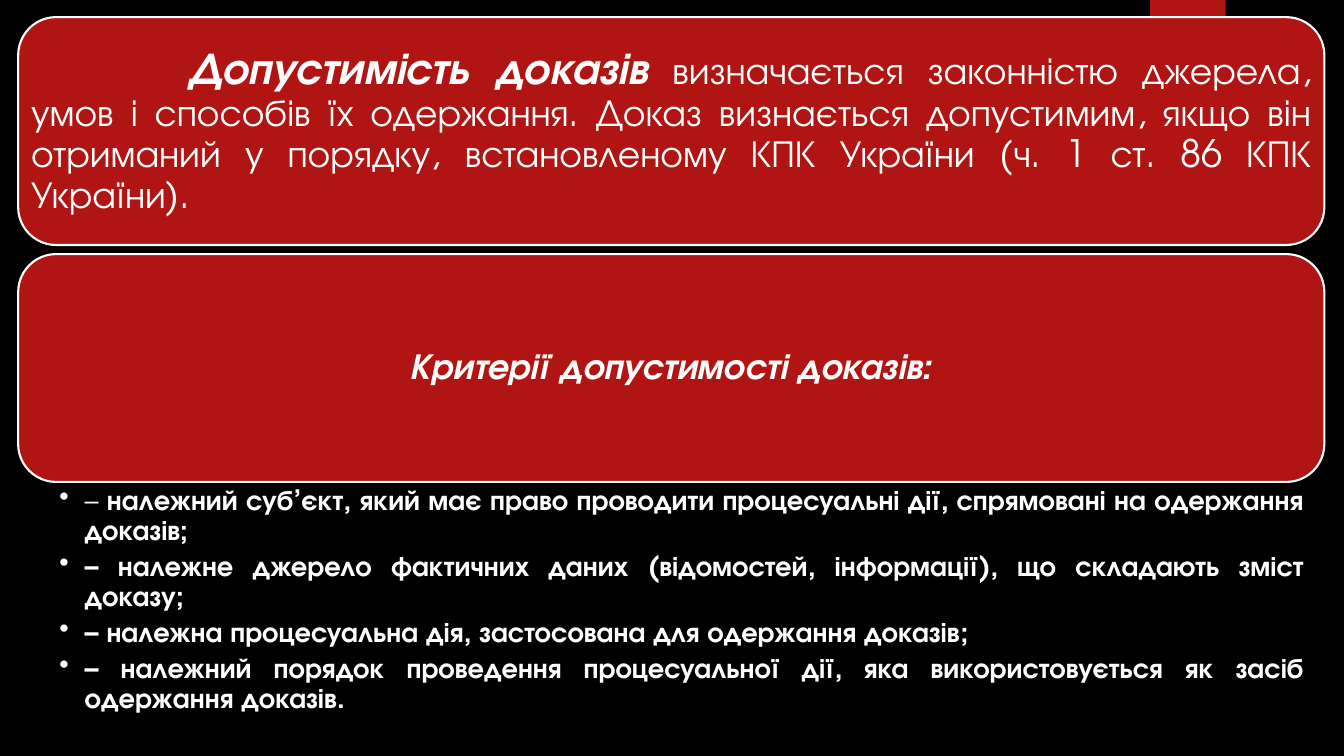
"""Build the slide on the admissibility of evidence."""
from dataclasses import dataclass

from lxml.etree import SubElement
from pptx import Presentation
from pptx.dml.color import RGBColor as RGB
from pptx.enum.shapes import MSO_SHAPE as SHAPE
from pptx.enum.text import MSO_ANCHOR as ANCHOR, PP_ALIGN as ALIGN
from pptx.oxml.ns import qn
from pptx.util import Pt


@dataclass(frozen=True)
class Theme:
    font: str = "TeX Gyre Adventor"
    black: RGB = RGB(0x00, 0x00, 0x00)
    red: RGB = RGB(0xB0, 0x15, 0x13)
    white: RGB = RGB(0xFF, 0xFF, 0xFF)
    term: float = 32
    definition: float = 27
    heading: float = 26
    criterion: float = 20


@dataclass(frozen=True)
class Span:
    text: str
    size: float
    bold: bool = False
    italic: bool = False


@dataclass(frozen=True)
class Panel:
    spans: tuple[Span, ...]
    align: ALIGN
    tab: float = 0


THEME = Theme()
LEFT, TOP, WIDTH = 13, 12.25, 933
PANEL_HEIGHT, PANEL_PITCH = 162.75, 169.25
LIST_TOP, LIST_HEIGHT = 344.25, 177.75
INDENT = 18

PANELS = (
    Panel((
        Span("\tДопустимість доказів", THEME.term, bold=True, italic=True),
        Span(" визначається законністю джерела, умов і способів їх одержання. "
             "Доказ визнається допустимим, якщо він отриманий у порядку, "
             "встановленому КПК України (ч. 1 ст. 86 КПК України).", THEME.definition),
    ), ALIGN.JUSTIFY, tab=112),
    Panel((
        Span("Критерії допустимості доказів:", THEME.heading, bold=True, italic=True),
    ), ALIGN.CENTER),
)

CRITERIA = (
    (Span("– ", THEME.criterion),
     Span("належний суб’єкт, який має право проводити процесуальні дії, "
          "спрямовані на одержання доказів;", THEME.criterion, bold=True)),
    (Span("– належне джерело фактичних даних (відомостей, інформації), "
          "що складають зміст доказу;", THEME.criterion, bold=True),),
    (Span("– належна процесуальна дія, застосована для одержання доказів;",
          THEME.criterion, bold=True),),
    (Span("– належний порядок проведення процесуальної дії, "
          "яка використовується як засіб одержання доказів.", THEME.criterion, bold=True),),
)


def add_text(p, text: str, *, size: float, bold: bool, italic: bool) -> None:
    """Add one formatted run to a paragraph."""
    r = p.add_run()
    r.text = text
    r.font.name = THEME.font
    r.font.size = Pt(size)
    r.font.bold = bold
    r.font.italic = italic
    r.font.color.rgb = THEME.white


def fill_paragraph(p, spans: tuple[Span, ...], align: ALIGN) -> None:
    """Set a paragraph's layout and add its runs."""
    p.alignment = align
    p.line_spacing = 0.9
    for span in spans:
        add_text(p, span.text, size=span.size, bold=span.bold, italic=span.italic)


def set_margins(tf, left: float, top: float, right: float, bottom: float) -> None:
    """Wrap a text frame and set its margins."""
    tf.word_wrap = True
    tf.margin_left, tf.margin_top = Pt(left), Pt(top)
    tf.margin_right, tf.margin_bottom = Pt(right), Pt(bottom)


def add_block(s, kind: SHAPE, left: float, top: float, width: float, height: float):
    """Add a flat red shape without an outline."""
    sp = s.shapes.add_shape(kind, Pt(left), Pt(top), Pt(width), Pt(height))
    sp.shadow.inherit = False
    sp.fill.solid()
    sp.fill.fore_color.rgb = THEME.red
    sp.line.fill.background()
    return sp


def add_panel(s, panel: Panel, top: float) -> None:
    """Add a rounded panel with its text."""
    sp = add_block(s, SHAPE.ROUNDED_RECTANGLE, LEFT, top, WIDTH, PANEL_HEIGHT)
    sp.line.color.rgb = THEME.white
    sp.line.width = Pt(1.5)
    tf = sp.text_frame
    set_margins(tf, 1.4, 1.4, 1.4, 1.4)
    tf.vertical_anchor = ANCHOR.MIDDLE
    p = tf.paragraphs[0]
    if panel.tab:
        tabs = SubElement(p._p.get_or_add_pPr(), qn("a:tabLst"))
        SubElement(tabs, qn("a:tab"), pos=str(Pt(panel.tab)), algn="l")
    fill_paragraph(p, panel.spans, panel.align)


def add_criteria(s) -> None:
    """Add the bulleted list of criteria."""
    sp = s.shapes.add_textbox(Pt(LEFT), Pt(LIST_TOP), Pt(WIDTH), Pt(LIST_HEIGHT))
    tf = sp.text_frame
    set_margins(tf, 29.5, 3, 14.5, 3)
    for i, spans in enumerate(CRITERIA):
        p = tf.add_paragraph() if i else tf.paragraphs[0]
        pPr = p._p.get_or_add_pPr()
        pPr.set("marL", str(Pt(INDENT)))
        pPr.set("indent", str(-Pt(INDENT)))
        SubElement(pPr, qn("a:buChar"), char="•")
        p.space_after = Pt(4)
        fill_paragraph(p, spans, ALIGN.JUSTIFY)


def main() -> None:
    """Build and save the presentation."""
    prs = Presentation()
    prs.slide_width, prs.slide_height = Pt(960), Pt(540)
    s = prs.slides.add_slide(prs.slide_layouts[6])
    s.background.fill.solid()
    s.background.fill.fore_color.rgb = THEME.black
    add_block(s, SHAPE.RECTANGLE, 821.5, 0, 54, 90)
    for i, panel in enumerate(PANELS):
        add_panel(s, panel, TOP + i * PANEL_PITCH)
    add_criteria(s)
    prs.save("out.pptx")


if __name__ == "__main__":
    main()
